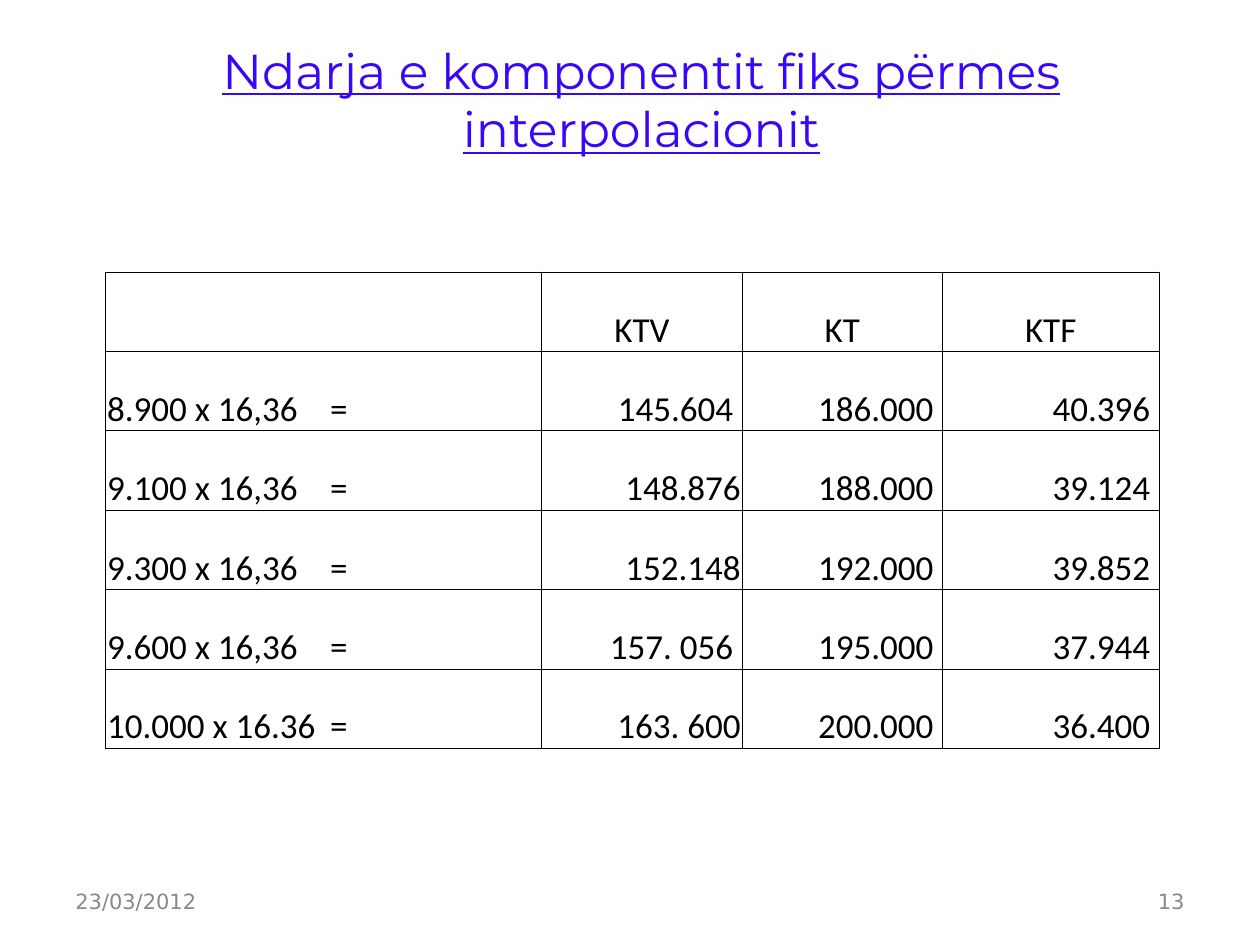
from dataclasses import dataclass

from lxml.etree import SubElement
from pptx import Presentation
from pptx.dml.color import RGBColor
from pptx.enum.text import MSO_ANCHOR as Anchor, PP_ALIGN as Align
from pptx.oxml import parse_xml
from pptx.oxml.ns import nsdecls, qn
from pptx.util import Inches, Pt


@dataclass(frozen=True)
class Theme:
    title_color: str = "3A06FA"
    text_color: str = "000000"
    footer_color: str = "898989"
    title_font: str = "Montserrat"
    table_font: str = "Calibri"
    footer_font: str = "DejaVu Sans"
    title_size: int = 28
    table_size: int = 20
    footer_size: int = 12
    border_width: float = 0.5


THEME = Theme()
SLIDE_WIDTH, SLIDE_HEIGHT = Inches(10), Inches(7.5)

COLUMN_WIDTHS = (34.6, 15.9, 15.9, 17.2)  # percent of the slide width
ROW_HEIGHT = 8.4  # percent of the slide height
EQUALS_STOP = 1.77  # inches from the cell's left inset
NARROW_INSET, WIDE_INSET = 0.01, 0.07
FLUSH_VALUES = {"148.876", "152.148", "163. 600"}

HEADER = ("", "KTV", "KT", "KTF")
ROWS = (
    ("8.900 x 16,36\t=", "145.604", "186.000", "40.396"),
    ("9.100 x 16,36\t=", "148.876", "188.000", "39.124"),
    ("9.300 x 16,36\t=", "152.148", "192.000", "39.852"),
    ("9.600 x 16,36\t=", "157. 056", "195.000", "37.944"),
    ("10.000 x 16.36\t=", "163. 600", "200.000", "36.400"),
)


def across(percent):
    return round(SLIDE_WIDTH * percent / 100)


def down(percent):
    return round(SLIDE_HEIGHT * percent / 100)


def write_text(frame, text, *, font, size, color, align=Align.LEFT, underline=False):
    paragraph = frame.paragraphs[0]
    paragraph.alignment = align
    run = paragraph.add_run()
    run.text = text
    run.font.name = font
    run.font.size = Pt(size)
    run.font.bold = False
    run.font.underline = underline
    run.font.color.rgb = RGBColor.from_string(color)
    return paragraph


def add_text_box(slide, left, top, width, height, text, anchor, **text_format):
    shape = slide.shapes.add_textbox(
        across(left), down(top), across(width), down(height))
    frame = shape.text_frame
    frame.word_wrap = True
    frame.vertical_anchor = anchor
    write_text(frame, text, **text_format)


def add_tab_stop(paragraph, inches):
    properties = paragraph._p.get_or_add_pPr()
    stops = SubElement(properties, qn("a:tabLst"))
    SubElement(stops, qn("a:tab"), pos=str(Inches(inches)), algn="l")


def set_borders(cell):
    properties = cell._tc.get_or_add_tcPr()
    for index, side in enumerate(("lnL", "lnR", "lnT", "lnB")):
        properties.insert(index, parse_xml(
            f'<a:{side} {nsdecls("a")} w="{Pt(THEME.border_width)}"><a:solidFill>'
            f'<a:srgbClr val="{THEME.text_color}"/></a:solidFill></a:{side}>'))


def fill_cell(cell, text, align, right_inset):
    cell.vertical_anchor = Anchor.BOTTOM
    cell.margin_left = cell.margin_top = Inches(NARROW_INSET)
    cell.margin_right = Inches(right_inset)
    cell.margin_bottom = 0
    cell.fill.background()
    set_borders(cell)
    if text:
        paragraph = write_text(
            cell.text_frame, text, font=THEME.table_font, size=THEME.table_size,
            color=THEME.text_color, align=align)
        if "\t" in text:
            add_tab_stop(paragraph, EQUALS_STOP)


def add_cost_table(slide, left, top):
    rows = (HEADER, *ROWS)
    table = slide.shapes.add_table(
        len(rows), len(HEADER), across(left), down(top),
        across(sum(COLUMN_WIDTHS)), down(ROW_HEIGHT * len(rows))).table
    table.first_row = table.horz_banding = False
    for column, width in zip(table.columns, COLUMN_WIDTHS):
        column.width = across(width)
    for row_index, values in enumerate(rows):
        table.rows[row_index].height = down(ROW_HEIGHT)
        for column_index, text in enumerate(values):
            align, inset = Align.RIGHT, WIDE_INSET
            if row_index == 0:
                align, inset = Align.CENTER, NARROW_INSET
            elif column_index == 0:
                align, inset = Align.LEFT, NARROW_INSET
            elif text in FLUSH_VALUES:
                inset = NARROW_INSET
            fill_cell(table.cell(row_index, column_index), text, align, inset)


def main():
    presentation = Presentation()
    presentation.slide_width, presentation.slide_height = SLIDE_WIDTH, SLIDE_HEIGHT
    slide = presentation.slides.add_slide(presentation.slide_layouts[6])

    # Footer: date and slide number
    for left, text, align in ((5, "23/03/2012", Align.LEFT), (71.7, "13", Align.RIGHT)):
        add_text_box(slide, left, 92.67, 23.3, 5.33, text, Anchor.MIDDLE,
                     font=THEME.footer_font, size=THEME.footer_size,
                     color=THEME.footer_color, align=align)

    # Title
    add_text_box(slide, 8.7, 10.67, 84.4, 6.67,
                 "Ndarja e komponentit fiks përmes interpolacionit", Anchor.BOTTOM,
                 font=THEME.title_font, size=THEME.title_size,
                 color=THEME.title_color, align=Align.CENTER, underline=True)

    # Cost table
    add_cost_table(slide, 8.4, 28.8)

    presentation.save("out.pptx")


if __name__ == "__main__":
    main()
